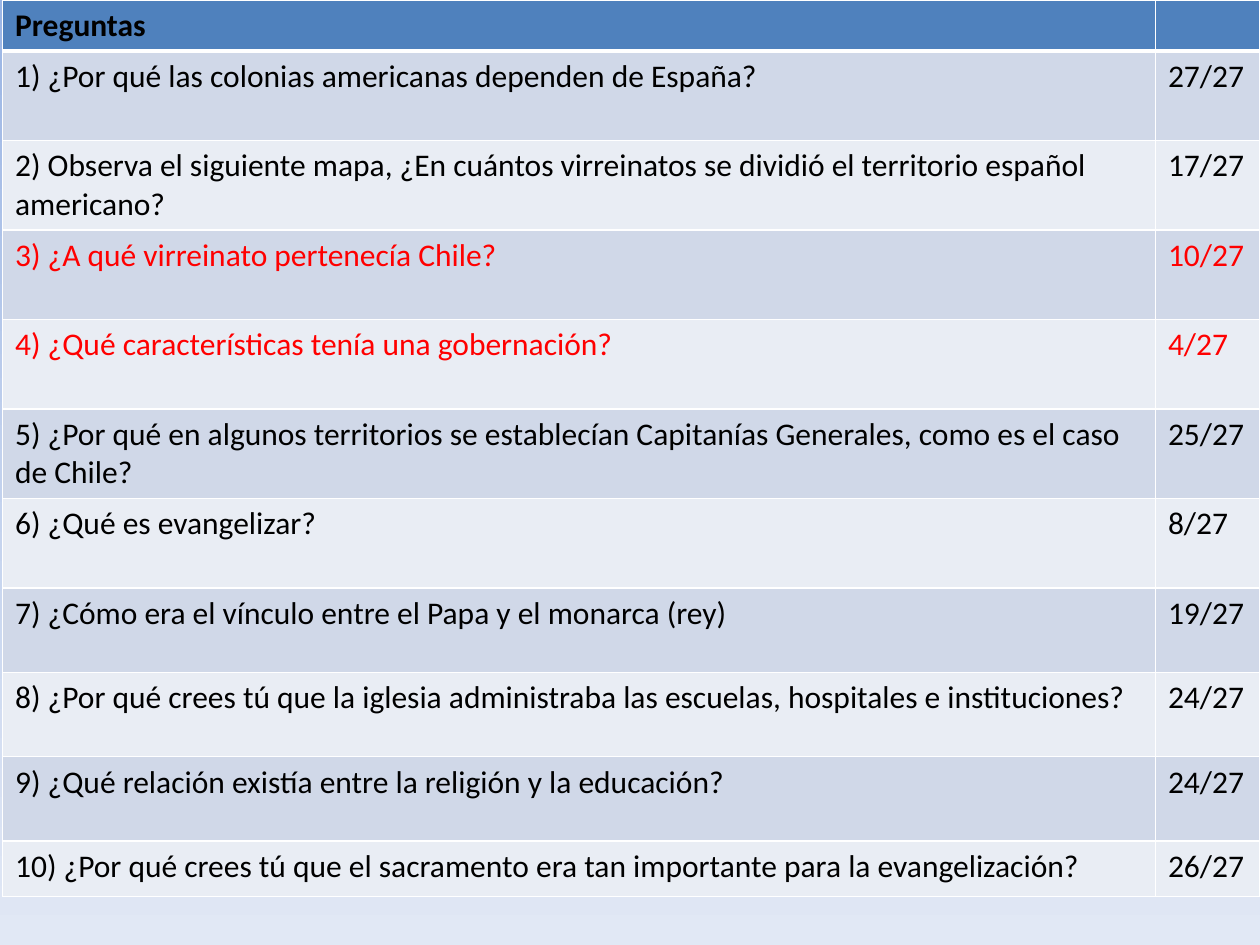
from copy import deepcopy

from lxml.etree import SubElement
from pptx import Presentation
from pptx.dml.color import RGBColor
from pptx.oxml.ns import qn
from pptx.util import Inches, Pt

BLACK = RGBColor(0x00, 0x00, 0x00)
RED = RGBColor(0xFF, 0x00, 0x00)
WHITE = RGBColor(0xFF, 0xFF, 0xFF)
HEADER_BLUE = RGBColor(0x4F, 0x81, 0xBD)
BANDS = [RGBColor(0xD0, 0xD8, 0xE8), RGBColor(0xE9, 0xED, 0xF4)]
BACKGROUND = [
    (0, RGBColor(0x9A, 0xB5, 0xE4)),
    (0.5, RGBColor(0xC2, 0xD1, 0xED)),
    (1, RGBColor(0xE1, 0xE8, 0xF5)),
]

ROWS = [
    ("Preguntas", ""),
    ("1) ¿Por qué las colonias americanas dependen de España?", "27/27"),
    ("2) Observa el siguiente mapa, ¿En cuántos virreinatos se dividió el territorio español americano?", "17/27"),
    ("3) ¿A qué virreinato pertenecía Chile?", "10/27"),
    ("4) ¿Qué características tenía una gobernación?", "4/27"),
    ("5) ¿Por qué en algunos territorios se establecían Capitanías Generales, como es el caso de Chile?", "25/27"),
    ("6) ¿Qué es evangelizar?", "8/27"),
    ("7) ¿Cómo era el vínculo entre el Papa y el monarca (rey)", "19/27"),
    ("8) ¿Por qué crees tú que la iglesia administraba las escuelas, hospitales e instituciones?", "24/27"),
    ("9) ¿Qué relación existía entre la religión y la educación?", "24/27"),
    ("10) ¿Por qué crees tú que el sacramento era tan importante para la evangelización?", "26/27"),
]
ROW_HEIGHTS = [0.4] + [0.71] * 6 + [0.67] * 3 + [0.44]
COLUMN_WIDTHS = [9.15, 0.83]
RED_ROWS = (3, 4)


def add_border(cell, side, width):
    line = SubElement(cell._tc.get_or_add_tcPr(), qn(f"a:ln{side}"), w=str(Pt(width)))
    fill = SubElement(line, qn("a:solidFill"))
    SubElement(fill, qn("a:srgbClr"), val=str(WHITE))


presentation = Presentation()
presentation.slide_width = Inches(10)
presentation.slide_height = Inches(7.5)
slide = presentation.slides.add_slide(presentation.slide_layouts[6])

background_fill = slide.background.fill
background_fill.gradient()
background_fill.gradient_angle = 270
stop_list = slide.element.xpath(".//a:gsLst")[0]
stop_list.append(deepcopy(stop_list[0]))
for stop, (position, color) in zip(background_fill.gradient_stops, BACKGROUND):
    stop.position = position
    stop.color.rgb = color

table = slide.shapes.add_table(
    len(ROWS), len(COLUMN_WIDTHS), Inches(0.02), Inches(0),
    Inches(sum(COLUMN_WIDTHS)), Inches(sum(ROW_HEIGHTS)),
).table
for column, width in zip(table.columns, COLUMN_WIDTHS):
    column.width = Inches(width)

for row_index, (texts, height) in enumerate(zip(ROWS, ROW_HEIGHTS)):
    table.rows[row_index].height = Inches(height)
    is_header = row_index == 0
    for column_index, text in enumerate(texts):
        cell = table.cell(row_index, column_index)
        add_border(cell, "L", 1)
        add_border(cell, "R", 1)
        add_border(cell, "T", 3 if row_index == 1 else 1)
        add_border(cell, "B", 3 if is_header else 1)
        cell.fill.solid()
        cell.fill.fore_color.rgb = HEADER_BLUE if is_header else BANDS[(row_index - 1) % 2]
        cell.text_frame.text = text
        font = cell.text_frame.paragraphs[0].font
        for run in cell.text_frame.paragraphs[0].runs:
            run.font.name = "Calibri"
            run.font.size = Pt(18)
            run.font.bold = is_header
            run.font.color.rgb = RED if row_index in RED_ROWS else BLACK

presentation.save("out.pptx")
